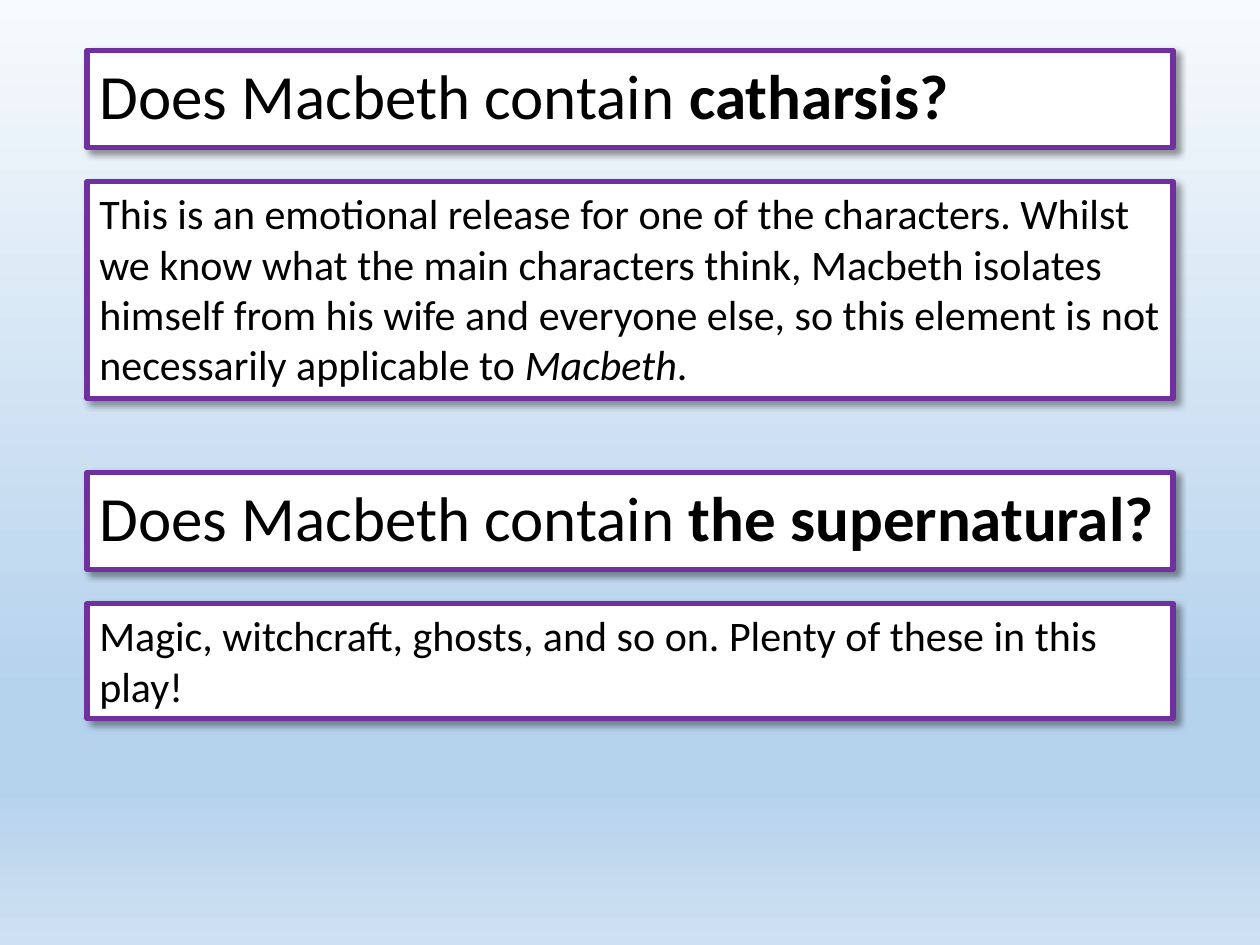
"""Build a slide asking whether Macbeth contains catharsis and the supernatural."""
import pptx
import pptx.dml.color
import pptx.enum.text
import pptx.oxml
import pptx.oxml.ns
import pptx.util
from lxml import etree

Pt = pptx.util.Pt
qn = pptx.oxml.ns.qn


def rgb(hex_color):
    return pptx.dml.color.RGBColor.from_string(hex_color)


class PanelSlide:
    font = "Calibri"
    ink = "000000"
    paper = "FFFFFF"
    border = "7030A0"
    left, width = 49.7, 620.6
    heading_height = 55.4

    def __init__(self, slide):
        self.slide = slide

    def background(self, stops):
        fill = self.slide.background.fill
        fill.gradient()
        fill.gradient_angle = 270
        stop_list = next(self.slide.element.iter(qn("a:gsLst")))
        for default_stop in list(stop_list):
            stop_list.remove(default_stop)
        for percent, color in stops:
            stop = etree.SubElement(stop_list, qn("a:gs"), pos=str(percent * 1000))
            etree.SubElement(stop, qn("a:srgbClr"), val=color)

    def shadow(self, panel):
        panel.shadow.inherit = False
        effects = panel.element.spPr.find(qn("a:effectLst"))
        outer = etree.SubElement(
            effects, qn("a:outerShdw"), blurRad=str(Pt(4)), dist=str(Pt(3)),
            dir=str(45 * 60000), algn="tl", rotWithShape="0")
        color = etree.SubElement(outer, qn("a:srgbClr"), val=self.ink)
        etree.SubElement(color, qn("a:alpha"), val="40000")

    def panel(self, panel, top, height, runs, size, anchor, spacing):
        panel.left, panel.top = Pt(self.left), Pt(top)
        panel.width, panel.height = Pt(self.width), Pt(height)
        panel.fill.solid()
        panel.fill.fore_color.rgb = rgb(self.paper)
        panel.line.color.rgb = rgb(self.border)
        panel.line.width = Pt(3)
        self.shadow(panel)
        frame = panel.text_frame
        frame.word_wrap = True
        frame.auto_size = pptx.enum.text.MSO_AUTO_SIZE.NONE
        frame.vertical_anchor = anchor
        paragraph = frame.paragraphs[0]
        paragraph.alignment = pptx.enum.text.PP_ALIGN.LEFT
        paragraph.line_spacing = spacing
        for text, style in runs:
            run = paragraph.add_run()
            run.text = text
            run.font.name = self.font
            run.font.size = Pt(size)
            run.font.color.rgb = rgb(self.ink)
            run.font.bold = style == "bold"
            run.font.italic = style == "italic"

    def text_box(self):
        return self.slide.shapes.add_textbox(0, 0, Pt(self.width), Pt(self.heading_height))

    def heading(self, top, element, is_title=False):
        holder = self.slide.shapes.title if is_title else self.text_box()
        runs = [("Does Macbeth contain ", ""), (element, "bold")]
        self.panel(holder, top, self.heading_height, runs, 36,
                   pptx.enum.text.MSO_ANCHOR.MIDDLE, 0.9)

    def answer(self, top, height, runs):
        self.panel(self.text_box(), top, height, runs, 24,
                   pptx.enum.text.MSO_ANCHOR.TOP, 1.0)


def main():
    deck = pptx.Presentation()
    deck.slide_width, deck.slide_height = Pt(720), Pt(540)
    page = PanelSlide(deck.slides.add_slide(deck.slide_layouts[5]))
    page.background([(0, "F7FAFD"), (74, "B5D2EC"), (83, "B5D2EC"), (100, "CEE1F2")])

    catharsis_answer = [
        ("This is an emotional release for one of the characters. Whilst we know what "
         "the main characters think, Macbeth isolates himself from his wife and everyone "
         "else, so this element is not necessarily applicable to ", ""),
        ("Macbeth", "italic"),
        (".", ""),
    ]
    supernatural_answer = [
        ("Magic, witchcraft, ghosts, and so on. Plenty of these in this play!", ""),
    ]
    questions = [
        (28.8, "catharsis?", 123.9, catharsis_answer),
        (270, "the supernatural?", 65.5, supernatural_answer),
    ]
    answer_offset = 74.9
    for number, (top, element, answer_height, answer) in enumerate(questions):
        page.heading(top, element, is_title=number == 0)
        page.answer(top + answer_offset, answer_height, answer)
    deck.save("out.pptx")


if __name__ == "__main__":
    main()
